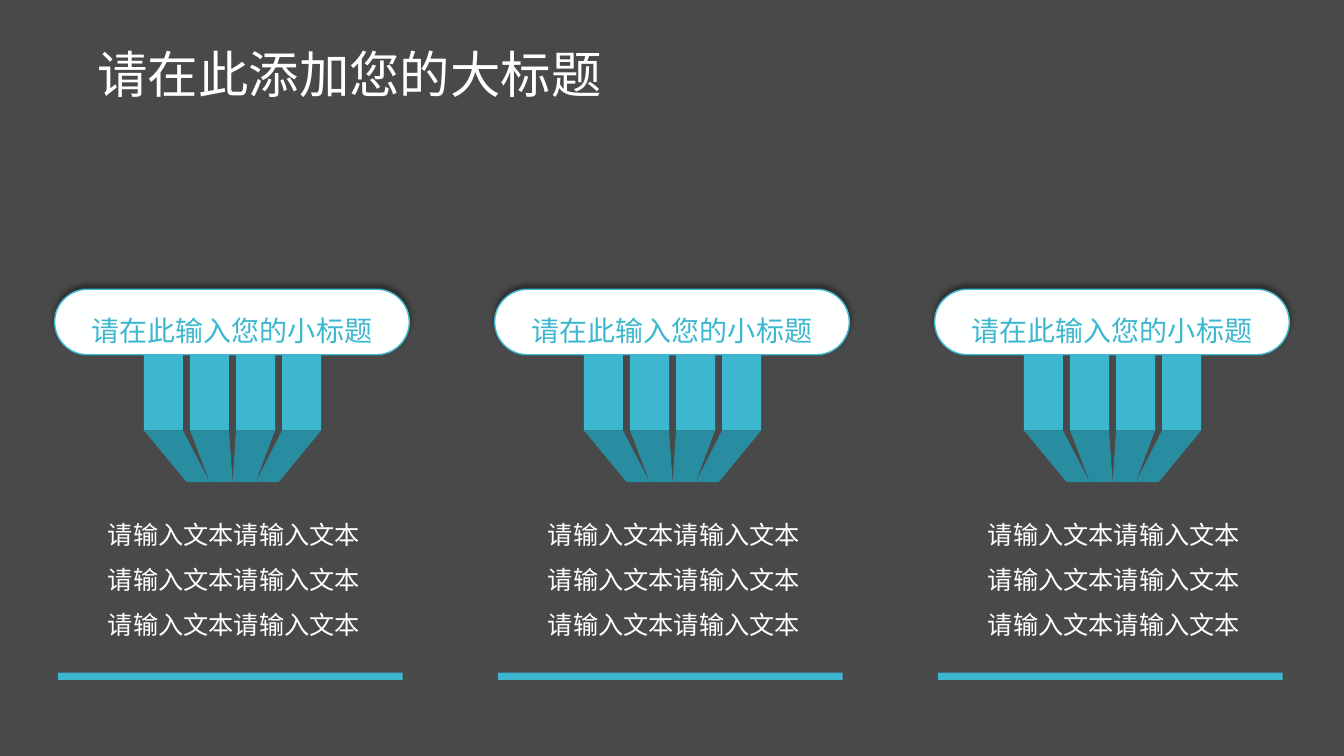
from lxml.etree import SubElement
from pptx import Presentation
from pptx.dml.color import RGBColor
from pptx.enum.shapes import MSO_SHAPE
from pptx.enum.text import MSO_ANCHOR, PP_ALIGN
from pptx.oxml.ns import qn
from pptx.util import Pt

BACKGROUND = RGBColor(0x49, 0x49, 0x49)
WHITE = RGBColor(0xFF, 0xFF, 0xFF)
PILL_WHITE = RGBColor(0xFE, 0xFF, 0xFF)
CYAN = RGBColor(0x3D, 0xB7, 0xCF)
DARK_CYAN = RGBColor(0x28, 0x8D, 0xA1)
FONT = "Noto Sans CJK SC"

COLUMN_COUNT = 3
COLUMN_LEFT = 39
COLUMN_PITCH = 314.3

BAR_COUNT = 4
BAR_OFFSET = 63.8
BAR_PITCH = 32.9
BAR_WIDTH = 27.9
BAR_TOP = 229.7
BAR_BOTTOM = 307.4
TIP_OFFSET = 94.4
TIP_WIDTH = 16.4
TIP_BOTTOM = 344.4


def write_text(frame, text, size, color, align, line_spacing):
    frame.word_wrap = True
    frame.vertical_anchor = MSO_ANCHOR.MIDDLE
    paragraph = frame.paragraphs[0]
    paragraph.alignment = align
    paragraph.line_spacing = line_spacing
    run = paragraph.add_run()
    run.text = text
    run.font.size = Pt(size)
    run.font.color.rgb = color
    run.font.name = FONT
    SubElement(run.font._element, qn("a:ea"), typeface=FONT)


def add_label(slide, left, top, width, height, *text_style):
    label = slide.shapes.add_textbox(Pt(left), Pt(top), Pt(width), Pt(height))
    write_text(label.text_frame, *text_style)


def paint(shape, color):
    shape.shadow.inherit = False
    shape.fill.solid()
    shape.fill.fore_color.rgb = color
    shape.line.fill.background()


def add_block(slide, kind, left, top, width, height, color):
    block = slide.shapes.add_shape(kind, Pt(left), Pt(top), Pt(width), Pt(height))
    paint(block, color)
    return block


def add_upward_shadow(shape):
    effects = shape._element.spPr.find(qn("a:effectLst"))
    shadow = SubElement(effects, qn("a:outerShdw"), blurRad=str(Pt(4)),
                        dist=str(Pt(3)), dir=str(270 * 60000), rotWithShape="0")
    black = SubElement(shadow, qn("a:srgbClr"), val="000000")
    SubElement(black, qn("a:alpha"), val="40000")


def add_bars(slide, column_left):
    for index in range(BAR_COUNT):
        left = column_left + BAR_OFFSET + index * BAR_PITCH
        bar = add_block(slide, MSO_SHAPE.ROUND_2_SAME_RECTANGLE, left, BAR_TOP,
                        BAR_WIDTH, BAR_BOTTOM - BAR_TOP, CYAN)
        bar.adjustments[0] = 0.08


def add_tips(slide, column_left):
    """Draw the darker facets that narrow from the bars to a shared base."""
    for index in range(BAR_COUNT):
        bar_left = column_left + BAR_OFFSET + index * BAR_PITCH
        tip_left = column_left + TIP_OFFSET + index * TIP_WIDTH
        corners = [(Pt(x), Pt(y)) for x, y in (
            (bar_left, BAR_BOTTOM),
            (bar_left + BAR_WIDTH, BAR_BOTTOM),
            (tip_left + TIP_WIDTH, TIP_BOTTOM),
            (tip_left, TIP_BOTTOM),
        )]
        outline = slide.shapes.build_freeform(*corners[0])
        outline.add_line_segments(corners[1:], close=True)
        paint(outline.convert_to_shape(), DARK_CYAN)


def add_pill(slide, left, text):
    pill = add_block(slide, MSO_SHAPE.ROUNDED_RECTANGLE, left, 206.6, 253.4, 46.8,
                     PILL_WHITE)
    pill.adjustments[0] = 0.5
    pill.line.color.rgb = CYAN
    pill.line.width = Pt(1)
    add_upward_shadow(pill)
    write_text(pill.text_frame, text, 20, CYAN, PP_ALIGN.CENTER, 1.5)


def add_column(slide, left, heading, body):
    add_bars(slide, left)
    add_tips(slide, left)
    add_block(slide, MSO_SHAPE.RECTANGLE, left + 2.3, 480.5, 246.4, 5.2, CYAN)
    add_label(slide, left + 24.3, 352, 207.4, 113, body, 18, WHITE,
              PP_ALIGN.CENTER, 1.5)
    add_pill(slide, left, heading)


def main():
    presentation = Presentation()
    presentation.slide_width = Pt(960)
    presentation.slide_height = Pt(540)
    slide = presentation.slides.add_slide(presentation.slide_layouts[6])
    slide.background.fill.solid()
    slide.background.fill.fore_color.rgb = BACKGROUND

    add_label(slide, 62.6, 21.6, 787.7, 67, "请在此添加您的大标题", 36, WHITE,
              PP_ALIGN.LEFT, 0.9)
    for index in range(COLUMN_COUNT):
        add_column(slide, COLUMN_LEFT + index * COLUMN_PITCH,
                   "请在此输入您的小标题", "请输入文本" * 6)

    presentation.save("out.pptx")


if __name__ == "__main__":
    main()
